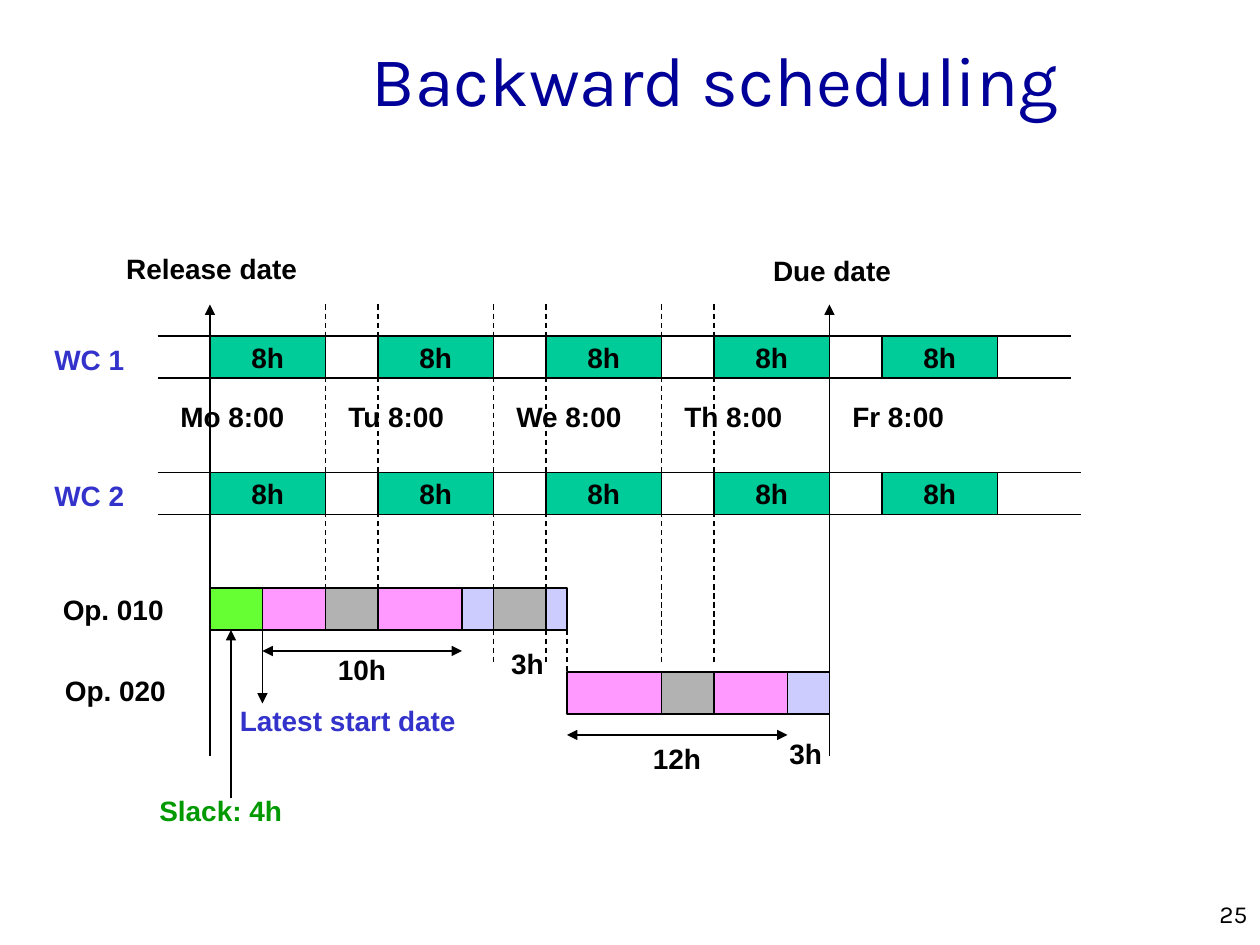
import pptx
import pptx.util
import pptx.dml.color
import pptx.enum.dml
import pptx.enum.shapes
import pptx.enum.text
import pptx.oxml
import pptx.oxml.ns

ALIGN = pptx.enum.text.PP_ALIGN
ANCHOR = pptx.enum.text.MSO_ANCHOR
COLS, ROWS = 120, 90  # grid cells across and down the slide

BLACK, NAVY, BLUE, GREEN = "000000", "000099", "3333CC", "009900"
SHIFT, SETUP, IDLE, WORK, SLACK = "00CC99", "CCCCFF", "B2B2B2", "FF99FF", "66FF33"
DAYS = 20, 36, 52, 68, 84  # column where each shift starts
SHIFT_COLS, BAR_ROWS, LABEL_ROWS = 11, 4, 4.44


def rgb(hex_string):
    return pptx.dml.color.RGBColor.from_string(hex_string)


def write(tf, text, size=16, font="Arial", color=BLACK, bold=True,
          align=ALIGN.LEFT, anchor=ANCHOR.TOP, wrap=False):
    tf.word_wrap = wrap
    tf.vertical_anchor = anchor
    p = tf.paragraphs[0]
    p.alignment = align
    r = p.add_run()
    r.text = text
    r.font.size = pptx.util.Pt(size)
    r.font.name = font
    r.font.bold = bold
    r.font.color.rgb = rgb(color)


class Chart:
    """Scheduling diagram placed on a grid of columns and rows."""

    def __init__(self, prs, s, line_color=BLACK, line_width=0.75):
        self.s = s
        self.cell_w = prs.slide_width / COLS
        self.cell_h = prs.slide_height / ROWS
        self.line_color = line_color
        self.line_width = line_width

    def x(self, col):
        return round(col * self.cell_w)

    def y(self, row):
        return round(row * self.cell_h)

    def place(self, col, row, cols, rows):
        return self.x(col), self.y(row), self.x(cols), self.y(rows)

    def stroke(self, line):
        line.color.rgb = rgb(self.line_color)
        line.width = pptx.util.Pt(self.line_width)

    def title(self, text, col, row, cols, rows):
        sp = self.s.shapes.title
        sp.left, sp.top, sp.width, sp.height = self.place(col, row, cols, rows)
        write(sp.text_frame, text, size=40, font="Karla", color=NAVY, bold=False,
              align=ALIGN.RIGHT, anchor=ANCHOR.MIDDLE, wrap=True)

    def label(self, text, col, row, cols, rows=LABEL_ROWS, **style):
        sp = self.s.shapes.add_textbox(*self.place(col, row, cols, rows))
        write(sp.text_frame, text, **style)

    def bar(self, col, row, cols, fill, text=None):
        sp = self.s.shapes.add_shape(pptx.enum.shapes.MSO_SHAPE.RECTANGLE,
                                     *self.place(col, row, cols, BAR_ROWS))
        sp.shadow.inherit = False
        sp.fill.solid()
        sp.fill.fore_color.rgb = rgb(fill)
        self.stroke(sp.line)
        if text:
            write(sp.text_frame, text, align=ALIGN.CENTER, anchor=ANCHOR.MIDDLE)

    def bars(self, col, row, segments):
        """Bars laid end to end, given as (columns, fill) pairs."""
        for cols, fill in segments:
            self.bar(col, row, cols, fill)
            col += cols

    def line(self, x1, y1, x2, y2, dash=False, ends=()):
        sp = self.s.shapes.add_connector(
            pptx.enum.shapes.MSO_CONNECTOR.STRAIGHT,
            self.x(x1), self.y(y1), self.x(x2), self.y(y2))
        self.stroke(sp.line)
        if dash:
            sp.line.dash_style = pptx.enum.dml.MSO_LINE.DASH
        ln = sp.line._get_or_add_ln()
        for end in ends:
            arrow = pptx.oxml.parse_xml(
                f'<a:{end} {pptx.oxml.ns.nsdecls("a")} type="triangle"/>')
            ln.append(arrow)
        effects = pptx.oxml.parse_xml(f'<a:effectLst {pptx.oxml.ns.nsdecls("a")}/>')
        sp._element.spPr.append(effects)


def main():
    prs = pptx.Presentation()
    prs.slide_width = pptx.util.Inches(10)
    prs.slide_height = pptx.util.Inches(7.5)
    s = prs.slides.add_slide(prs.slide_layouts[5])
    chart = Chart(prs, s)

    # Title and page number
    chart.title("Backward scheduling", 0, 0, 102, 15)
    chart.label("25", 95, 85, 25, 3, size=14, font="Karla", bold=False,
                align=ALIGN.RIGHT)

    # Work centres with their daily shifts
    for name, row, end in (("WC 1", 32, 102), ("WC 2", 45, 103)):
        for col in DAYS:
            chart.bar(col, row, SHIFT_COLS, SHIFT, "8h")
        for edge in (row, row + BAR_ROWS):
            chart.line(15, edge, end, edge)
        chart.label(name, 4, row, 9.12, color=BLUE)

    # Shift start times
    widths = 12.36, 11.76, 12.48, 11.76, 11.16
    for day, col, cols in zip(("Mo", "Tu", "We", "Th", "Fr"), DAYS, widths):
        chart.label(f"{day} 8:00", col - 4, 37.5, cols)

    # Release and due dates
    for col in (20, 79):
        chart.line(col, 29, col, 72, ends=["headEnd"])
    chart.label("Release date", 10.8, 23.4, 18.72, align=ALIGN.CENTER)
    chart.label("Due date", 72.4, 23.6, 13.68, align=ALIGN.CENTER)

    # Shift boundaries
    for start in DAYS[:4]:
        for col in (start, start + SHIFT_COLS):
            if 20 < col < 79:
                chart.line(col, 29, col, 56 if col < 40 else 63, dash=True)
    chart.line(54, 60, 54, 64, dash=True)

    # Operations: bars, name, working span and durations
    chart.bars(20, 56, [(5, SLACK), (6, WORK), (5, IDLE), (8, WORK),
                        (3, SETUP), (5, IDLE), (2, SETUP)])
    chart.bars(54, 64, [(9, WORK), (5, IDLE), (7, WORK), (4, SETUP)])
    for x1, x2, row in ((25, 44, 62), (54, 75, 70)):
        chart.line(x1, row, x2, row, ends=["headEnd", "tailEnd"])
    for text, col, row, cols in (("Op. 010", 4.8, 55.8, 12.12),
                                 ("10h", 31, 61.6, 6.96),
                                 ("3h", 47.5, 61, 5.52),
                                 ("Op. 020", 5, 63.6, 12.12),
                                 ("12h", 61, 70, 6.96),
                                 ("3h", 74, 69.6, 5.52)):
        chart.label(text, col, row, cols)

    # Latest start date and slack
    chart.line(25, 67, 25, 60, ends=["headEnd"])
    chart.label("Latest start date", 21.6, 66.4, 23.04, color=BLUE,
                align=ALIGN.CENTER)
    chart.line(22, 76, 22, 60, ends=["tailEnd"])
    chart.label("Slack: 4h", 14, 75, 14.16, color=GREEN)

    prs.save("out.pptx")


if __name__ == "__main__":
    main()
